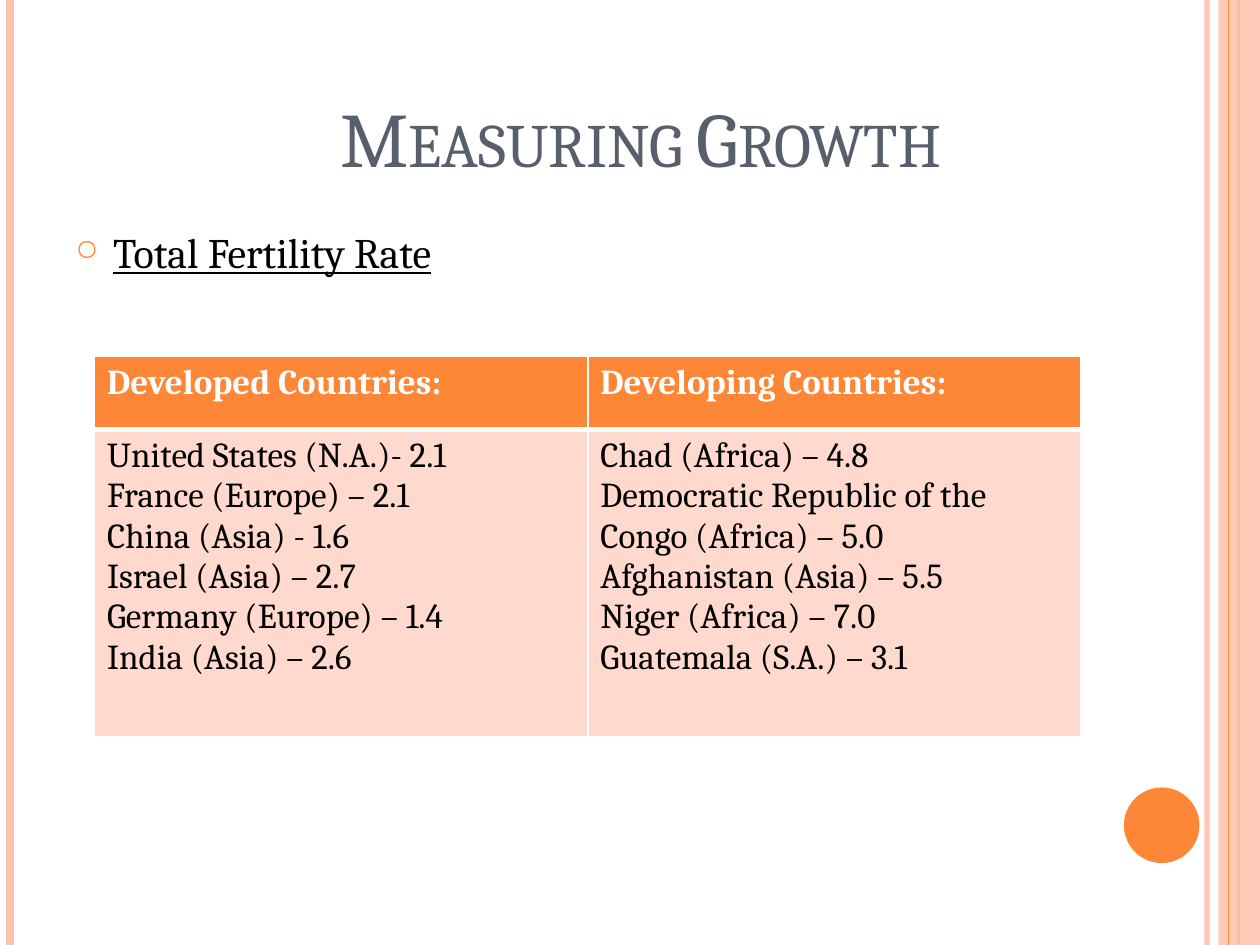
from dataclasses import dataclass

from lxml import etree
from pptx import Presentation
from pptx import util as u
from pptx.dml.color import RGBColor
from pptx.enum import shapes, text
from pptx.oxml import ns


@dataclass(frozen=True)
class Theme:
    font: str = "Cambria"
    orange: str = "FE8637"
    peach: str = "FEC3AE"
    pale: str = "FFD9CE"
    slate: str = "575F6D"
    white: str = "FFFFFF"
    black: str = "000000"
    title_size: int = 44
    body_size: int = 24
    table_size: int = 20


THEME = Theme()
RATES = {
    "Developed Countries:": [
        "United States (N.A.)- 2.1",
        "France (Europe) – 2.1",
        "China (Asia) - 1.6",
        "Israel (Asia) – 2.7",
        "Germany (Europe) – 1.4",
        "India (Asia) – 2.6",
    ],
    "Developing Countries:": [
        "Chad (Africa) – 4.8",
        "Democratic Republic of the Congo (Africa) – 5.0",
        "Afghanistan (Asia) – 5.5",
        "Niger (Africa) – 7.0",
        "Guatemala (S.A.) – 3.1",
    ],
}


def add_xml(parent, tag, **attributes):
    return etree.SubElement(parent, ns.qn(tag), attributes)


def set_alpha(fill_parent, percent):
    colour = fill_parent.find(".//" + ns.qn("a:srgbClr"))
    add_xml(colour, "a:alpha", val=str(percent * 1000))


def write(frame, lines, size, color, bold=False, underline=False,
          small_caps=False, align=text.PP_ALIGN.LEFT):
    """Fill a text frame with one paragraph per line."""
    frame.word_wrap = True
    for index, line in enumerate(lines):
        paragraph = frame.paragraphs[0] if index == 0 else frame.add_paragraph()
        paragraph.alignment = align
        run = paragraph.add_run()
        run.text = line
        font = run.font
        font.name, font.size = THEME.font, u.Pt(size)
        font.bold, font.underline = bold, underline
        font.color.rgb = RGBColor.from_string(color)
        if small_caps:
            font._element.set("cap", "small")


def add_text(slide, box, lines, anchor=text.MSO_ANCHOR.TOP, **style):
    frame = slide.shapes.add_textbox(*map(u.Inches, box)).text_frame
    write(frame, lines, **style)
    frame.vertical_anchor = anchor
    return frame


def add_bullet(paragraph):
    paragraph.space_before = u.Pt(6)
    props = paragraph._p.get_or_add_pPr()
    indent = u.Inches(0.3)
    props.set("marL", str(indent))
    props.set("indent", str(-indent))
    add_xml(add_xml(props, "a:buClr"), "a:srgbClr", val=THEME.orange)
    add_xml(props, "a:buSzPct", val="70000")
    add_xml(props, "a:buChar", char="○")


def add_rule(slide, x, width, color, alpha=None):
    """Draw a vertical line over the full slide height."""
    rule = slide.shapes.add_connector(
        shapes.MSO_CONNECTOR.STRAIGHT,
        u.Inches(x), 0, u.Inches(x), u.Inches(7.5))
    rule.line.width = u.Pt(width)
    rule.line.color.rgb = RGBColor.from_string(color)
    props = rule._element.spPr
    if alpha:
        set_alpha(props, alpha)
    add_xml(props, "a:effectLst")


def add_block(slide, kind, box, color, alpha=None):
    block = slide.shapes.add_shape(kind, *map(u.Inches, box))
    block.shadow.inherit = False
    block.fill.solid()
    block.fill.fore_color.rgb = RGBColor.from_string(color)
    block.line.fill.background()
    if alpha:
        set_alpha(block._element.spPr, alpha)


def style_cell(cell, fill, top, bottom):
    cell.fill.solid()
    cell.fill.fore_color.rgb = RGBColor.from_string(fill)
    props = cell._tc.get_or_add_tcPr()
    widths = {"a:lnL": 1, "a:lnR": 1, "a:lnT": top, "a:lnB": bottom}
    for position, (side, width) in enumerate(widths.items()):
        border = add_xml(props, side, w=str(u.Pt(width)))
        add_xml(add_xml(border, "a:solidFill"), "a:srgbClr", val=THEME.white)
        props.insert(position, border)  # borders come before the fill


def add_rates_table(slide):
    box = map(u.Inches, (0.75, 2.83, 7.83, 3.02))
    table = slide.shapes.add_table(2, len(RATES), *box).table
    for row, height in zip(table.rows, (0.58, 2.44)):
        row.height = u.Inches(height)
    for column, (heading, countries) in enumerate(RATES.items()):
        header, body = table.cell(0, column), table.cell(1, column)
        write(header.text_frame, [heading], THEME.table_size, THEME.white,
              bold=True)
        write(body.text_frame, countries, THEME.table_size, THEME.black)
        style_cell(header, THEME.orange, top=1, bottom=3)
        style_cell(body, THEME.pale, top=3, bottom=1)


def add_decoration(slide):
    add_rule(slide, 9.58, 3, THEME.peach, alpha=93)
    add_rule(slide, 0.08, 4.5, THEME.peach)
    add_rule(slide, 9.83, 1.5, THEME.orange)
    add_block(slide, shapes.MSO_SHAPE.RECTANGLE, (9.67, 0, 0.33, 7.5),
              THEME.peach, alpha=87)
    add_rule(slide, 9.75, 0.75, THEME.orange)
    add_block(slide, shapes.MSO_SHAPE.OVAL, (8.92, 6.25, 0.6, 0.6),
              THEME.orange)


def main():
    deck = Presentation()
    deck.slide_width, deck.slide_height = u.Inches(10), u.Inches(7.5)
    slide = deck.slides.add_slide(deck.slide_layouts[6])

    # Side stripes and circle
    add_decoration(slide)

    # Title and topic
    add_text(slide, (1, 0.25, 8.17, 1.25), ["Measuring Growth"],
             anchor=text.MSO_ANCHOR.BOTTOM, size=THEME.title_size,
             color=THEME.slate, small_caps=True, align=text.PP_ALIGN.CENTER)
    topic = add_text(slide, (0.5, 1.75, 8.17, 5.33), ["Total Fertility Rate"],
                     size=THEME.body_size, color=THEME.black, underline=True)
    add_bullet(topic.paragraphs[0])

    # Fertility rates by country
    add_rates_table(slide)

    deck.save("out.pptx")


if __name__ == "__main__":
    main()
